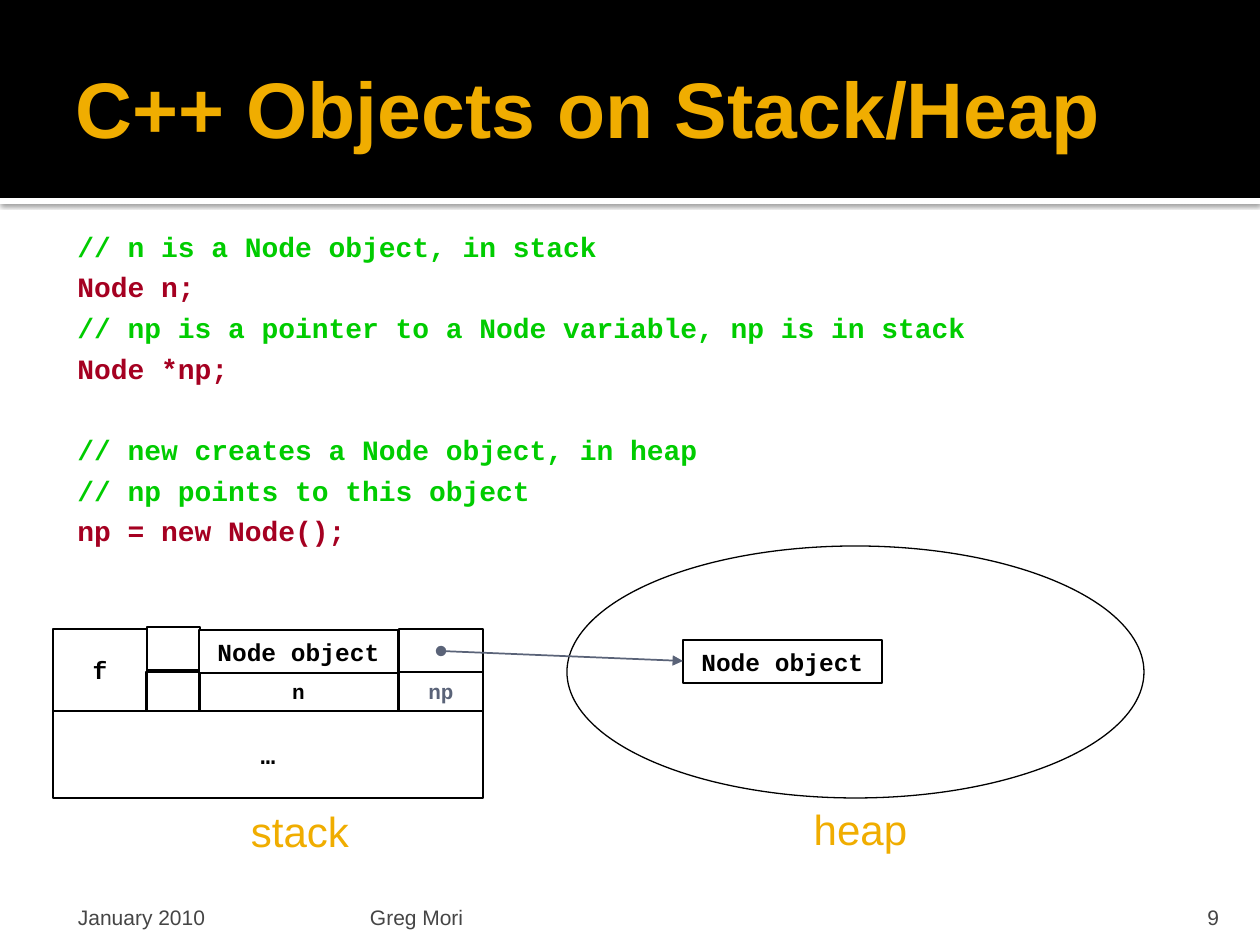
"""Builds a slide on where C++ objects live: stack or heap."""
import pptx
import pptx.util
import pptx.dml.color
import pptx.enum.shapes
import pptx.enum.text
import pptx.oxml
import pptx.oxml.ns

SCALE = pptx.util.Inches(1) / 126
COLORS = {"black": "000000", "white": "FFFFFF", "gold": "F0AD00", "slate": "5A6378",
          "green": "00CC00", "red": "A50021", "gray": "454545"}
SHAPE = pptx.enum.shapes.MSO_SHAPE
ALIGN = pptx.enum.text.PP_ALIGN
ANCHOR = pptx.enum.text.MSO_ANCHOR
NAMESPACE = pptx.oxml.ns.nsdecls("a")

TITLE = "C++ Objects on Stack/Heap"
CODE = [
    ("// n is a Node object, in stack", "green", 6),
    ("Node n;", "red", 6),
    ("// np is a pointer to a Node variable, np is in stack", "green", 6),
    ("Node *np;", "red", 29),
    ("// new creates a Node object, in heap", "green", 6),
    ("// np points to this object", "green", 6),
    ("np = new Node();", "red", 6),
]
BANDS = [((0, 198, 1260, 6), "white"), ((0, 0, 1260, 198), "black")]
CELLS = [
    ((199, 672, 199, 39), None, "n", 12, "black"),
    ((399, 672, 84, 39), None, "np", 12, "slate"),
    ((53, 629, 94, 82), None, "f", 14, "black"),
    ((53, 711, 430, 87), None, "…", 14, "black"),
    ((399, 629, 84, 43), "white", "", 14, "black"),
    ((146, 672, 54, 39), None, "", 14, "black"),
    ((147, 627, 53, 43), None, "", 14, "black"),
    ((199, 630, 199, 43), "white", "Node object", 14, "black"),
    ((683, 640, 199, 43), "white", "Node object", 14, "black"),
]
HEAP = (567, 546, 577, 252)
POINTER = (441, 651, 683, 661)
LABELS = [((116, 800, 368, 63), "stack"), ((577, 798, 567, 64), "heap")]
FOOTERS = [
    ((63, 892, 294, 38), "January 2010", ALIGN.LEFT, 15),
    ((1130, 892, 101, 38), "9", ALIGN.RIGHT, 12),
    ((364, 892, 759, 38), "Greg Mori", ALIGN.LEFT, 6),
]


def px(*lengths):
    return [round(length * SCALE) for length in lengths]


def rgb(name):
    return pptx.dml.color.RGBColor.from_string(COLORS[name])


def place(shape, area):
    shape.left, shape.top, shape.width, shape.height = px(*area)


def set_frame(shape, insets, anchor):
    frame = shape.text_frame
    frame.word_wrap = True
    frame.auto_size = pptx.enum.text.MSO_AUTO_SIZE.NONE
    frame.vertical_anchor = anchor
    (frame.margin_left, frame.margin_top,
     frame.margin_right, frame.margin_bottom) = px(*insets)
    return frame


def write(para, text, size, color, font="Arial", bold=False, align=ALIGN.LEFT):
    para.alignment = align
    span = para.add_run()
    span.text = text
    span.font.name = font
    span.font.size = pptx.util.Pt(size)
    span.font.bold = bold
    span.font.color.rgb = rgb(color)


def add_shape(page, kind, area, fill=None, line=None):
    shape = page.shapes.add_shape(kind, *px(*area))
    shape.shadow.inherit = False
    if fill:
        shape.fill.solid()
        shape.fill.fore_color.rgb = rgb(fill)
    else:
        shape.fill.background()
    if line:
        shape.line.color.rgb = rgb(line)
        shape.line.width = pptx.util.Pt(0.75)
    else:
        shape.line.fill.background()
    return shape


def add_text(page, area, text, size, color, align, insets, anchor):
    box = page.shapes.add_textbox(*px(*area))
    frame = set_frame(box, insets, anchor)
    write(frame.paragraphs[0], text, size, color, align=align)


def add_header(page):
    bands = [add_shape(page, SHAPE.RECTANGLE, area, fill) for area, fill in BANDS]
    effects = bands[0]._element.spPr.find(pptx.oxml.ns.qn("a:effectLst"))
    effects.append(pptx.oxml.parse_xml(
        f'<a:outerShdw {NAMESPACE} blurRad="31750" dist="10160" dir="5400000">'
        '<a:srgbClr val="000000"><a:alpha val="60000"/></a:srgbClr></a:outerShdw>'))
    for position, band in enumerate(bands):
        page.shapes._spTree.insert(2 + position, band._element)
    title = page.shapes.title
    place(title, (63, 21, 1134, 173))
    frame = set_frame(title, (13, 6, 6, 6), ANCHOR.MIDDLE)
    write(frame.paragraphs[0], TITLE, 45, "gold", bold=True)


def add_code(page):
    body = page.placeholders[1]
    place(body, (53, 220, 935, 388))
    frame = set_frame(body, (8, 13, 13, 6), ANCHOR.TOP)
    for number, (text, color, gap) in enumerate(CODE):
        para = frame.add_paragraph() if number else frame.paragraphs[0]
        para.line_spacing = 0.9
        para.space_before = pptx.util.Pt(0)
        para.space_after = pptx.util.Pt(gap)
        write(para, text, 16, color, "Courier New", True)
        properties = para._p.get_or_add_pPr()
        properties.set("marL", str(pptx.util.Inches(0.48)))
        properties.set("indent", str(pptx.util.Inches(-0.35)))
        properties.append(pptx.oxml.parse_xml(f"<a:buNone {NAMESPACE}/>"))


def add_memory(page):
    add_shape(page, SHAPE.OVAL, HEAP, line="black")
    for area, fill, text, size, color in CELLS:
        cell = add_shape(page, SHAPE.RECTANGLE, area, fill, "black")
        if text:
            frame = set_frame(cell, (6, 6, 6, 6), ANCHOR.MIDDLE)
            write(frame.paragraphs[0], text, size, color, "Courier New", True, ALIGN.CENTER)
    arrow = page.shapes.add_connector(
        pptx.enum.shapes.MSO_CONNECTOR.STRAIGHT, *px(*POINTER))
    arrow.line.color.rgb = rgb("slate")
    arrow.line.width = pptx.util.Pt(1)
    outline = arrow.line._get_or_add_ln()
    for end, kind in (("headEnd", "oval"), ("tailEnd", "triangle")):
        outline.append(pptx.oxml.parse_xml(f'<a:{end} {NAMESPACE} type="{kind}"/>'))
    arrow._element.spPr.append(pptx.oxml.parse_xml(f"<a:effectLst {NAMESPACE}/>"))


def main():
    deck = pptx.Presentation()
    deck.slide_width, deck.slide_height = px(1260, 945)
    page = deck.slides.add_slide(deck.slide_layouts[1])
    add_header(page)
    add_code(page)
    add_memory(page)
    for area, text in LABELS:
        add_text(page, area, text, 24, "gold", ALIGN.CENTER, (13, 6, 13, 6), ANCHOR.TOP)
    for area, text, align, inset in FOOTERS:
        add_text(page, area, text, 12, "gray", align, (inset, 6, inset, 0), ANCHOR.BOTTOM)
    deck.save("out.pptx")


if __name__ == "__main__":
    main()
